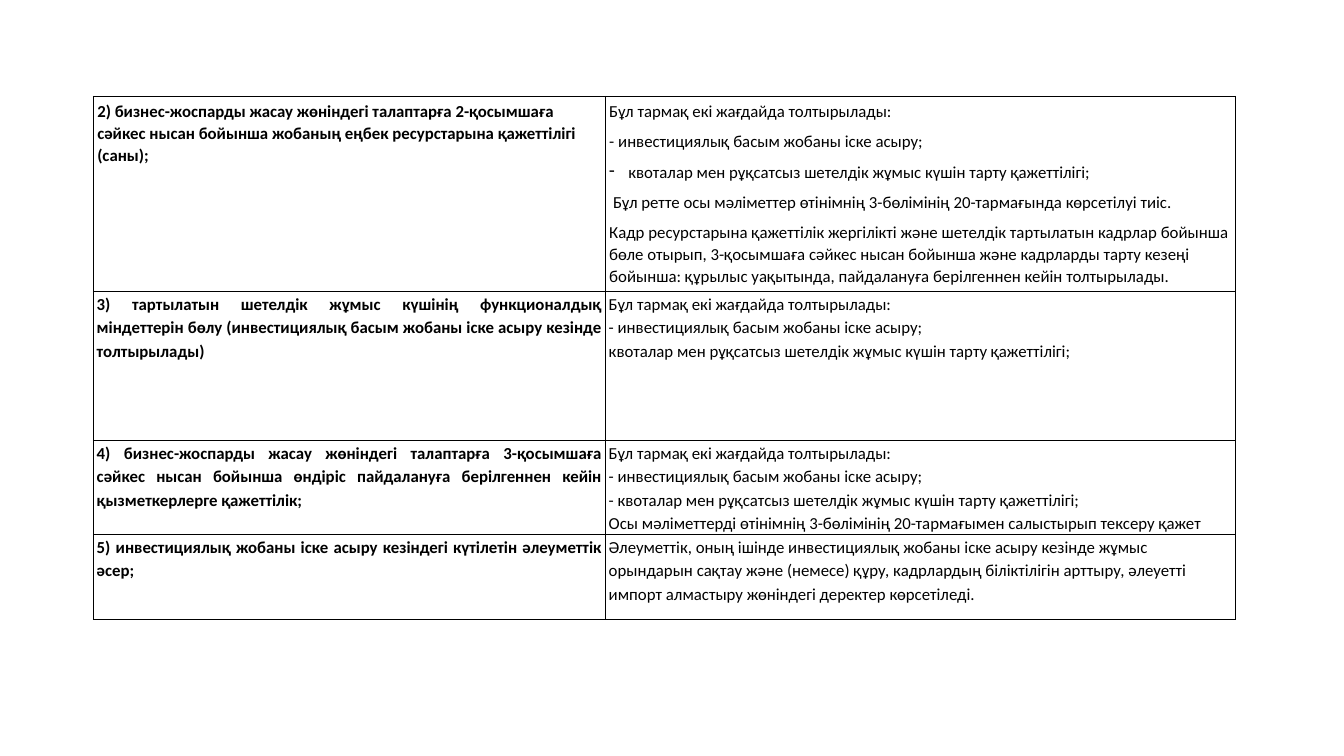
from lxml import etree
from pptx import Presentation
from pptx.dml.color import RGBColor
from pptx.enum import text
from pptx.oxml import ns
from pptx.util import Inches, Pt

BLACK = RGBColor(0, 0, 0)
BORDER_WIDTH = Pt(1)
BULLET = "•"  # marks an answer line that hangs from a dash

BOTH_CASES = "Бұл тармақ екі жағдайда толтырылады:"
PRIORITY = "- инвестициялық басым жобаны іске асыру;"
QUOTAS = "квоталар мен рұқсатсыз шетелдік жұмыс күшін тарту қажеттілігі;"

# (row height, requirement, explanation lines)
REQUIREMENTS = [
    (3.87,
     "2) бизнес-жоспарды жасау жөніндегі талаптарға 2-қосымшаға сәйкес нысан "
     "бойынша жобаның еңбек ресурстарына қажеттілігі (саны);",
     [BOTH_CASES, PRIORITY, BULLET + QUOTAS,
      " Бұл ретте осы мәліметтер өтінімнің 3-бөлімінің 20-тармағында "
      "көрсетілуі тиіс.",
      "Кадр ресурстарына қажеттілік жергілікті және шетелдік тартылатын кадрлар "
      "бойынша бөле отырып, 3-қосымшаға сәйкес нысан бойынша және кадрларды тарту "
      "кезеңі бойынша: құрылыс уақытында, пайдалануға берілгеннен кейін "
      "толтырылады."]),
    (2.95,
     "3) тартылатын шетелдік жұмыс күшінің функционалдық міндеттерін бөлу "
     "(инвестициялық басым жобаны іске асыру кезінде толтырылады)",
     [BOTH_CASES, PRIORITY, QUOTAS]),
    (1.86,
     "4) бизнес-жоспарды жасау жөніндегі талаптарға 3-қосымшаға сәйкес нысан "
     "бойынша өндіріс пайдалануға берілгеннен кейін қызметкерлерге қажеттілік;",
     [BOTH_CASES, PRIORITY, "- " + QUOTAS,
      "Осы мәліметтерді өтінімнің 3-бөлімінің 20-тармағымен салыстырып тексеру "
      "қажет"]),
    (1.68,
     "5) инвестициялық жобаны іске асыру кезіндегі күтілетін әлеуметтік әсер;",
     ["Әлеуметтік, оның ішінде инвестициялық жобаны іске асыру кезінде жұмыс "
      "орындарын сақтау және (немесе) құру, кадрлардың біліктілігін арттыру, "
      "әлеуетті импорт алмастыру жөніндегі деректер көрсетіледі."]),
]
COLUMN_WIDTHS = [10.16, 12.51]
LEFT, TOP = 1.85, 1.91


def add_borders(cell):
    properties = cell._tc.get_or_add_tcPr()
    for position, side in enumerate(("a:lnL", "a:lnR", "a:lnT", "a:lnB")):
        line = etree.Element(ns.qn(side), w=str(BORDER_WIDTH))
        fill = etree.SubElement(line, ns.qn("a:solidFill"))
        etree.SubElement(fill, ns.qn("a:srgbClr"), val=str(BLACK))
        properties.insert(position, line)


def add_dash(paragraph):
    properties = paragraph._p.get_or_add_pPr()
    properties.set("marL", str(Inches(0.38)))
    properties.set("indent", str(-Inches(0.38)))
    etree.SubElement(properties, ns.qn("a:buChar"), char="-")


def fill_cell(cell, lines, bold, spacious):
    """Write the lines; the spacious first row has wider margins and gaps."""
    cell.fill.background()
    add_borders(cell)
    cell.margin_left = cell.margin_right = Inches(0.08 if spacious else 0.07)
    cell.margin_top = cell.margin_bottom = Inches(0.08 if spacious else 0)
    frame = cell.text_frame
    for index, line in enumerate(lines):
        paragraph = frame.add_paragraph() if index else frame.paragraphs[0]
        paragraph.text = line.removeprefix(BULLET)
        paragraph.line_spacing = 1.07 if spacious else 1.15
        paragraph.space_after = Pt(12 if spacious else 0)
        if bold and not spacious:
            paragraph.alignment = text.PP_ALIGN.JUSTIFY
        if line.startswith(BULLET):
            add_dash(paragraph)
        font = paragraph.font
        font.name, font.size, font.bold = "Calibri", Pt(24), bold
        font.color.rgb = BLACK


def main():
    deck = Presentation()
    deck.slide_width, deck.slide_height = Inches(26.67), Inches(15)
    slide = deck.slides.add_slide(deck.slide_layouts[6])
    heights = [height for height, _, _ in REQUIREMENTS]
    table = slide.shapes.add_table(
        len(REQUIREMENTS), len(COLUMN_WIDTHS), Inches(LEFT), Inches(TOP),
        Inches(sum(COLUMN_WIDTHS)), Inches(sum(heights))).table
    table.first_row = table.horz_banding = False
    for column, width in zip(table.columns, COLUMN_WIDTHS):
        column.width = Inches(width)
    for index, (height, requirement, explanation) in enumerate(REQUIREMENTS):
        table.rows[index].height = Inches(height)
        spacious = index == 0
        fill_cell(table.cell(index, 0), [requirement], True, spacious)
        fill_cell(table.cell(index, 1), explanation, False, spacious)
    deck.save("out.pptx")


if __name__ == "__main__":
    main()
